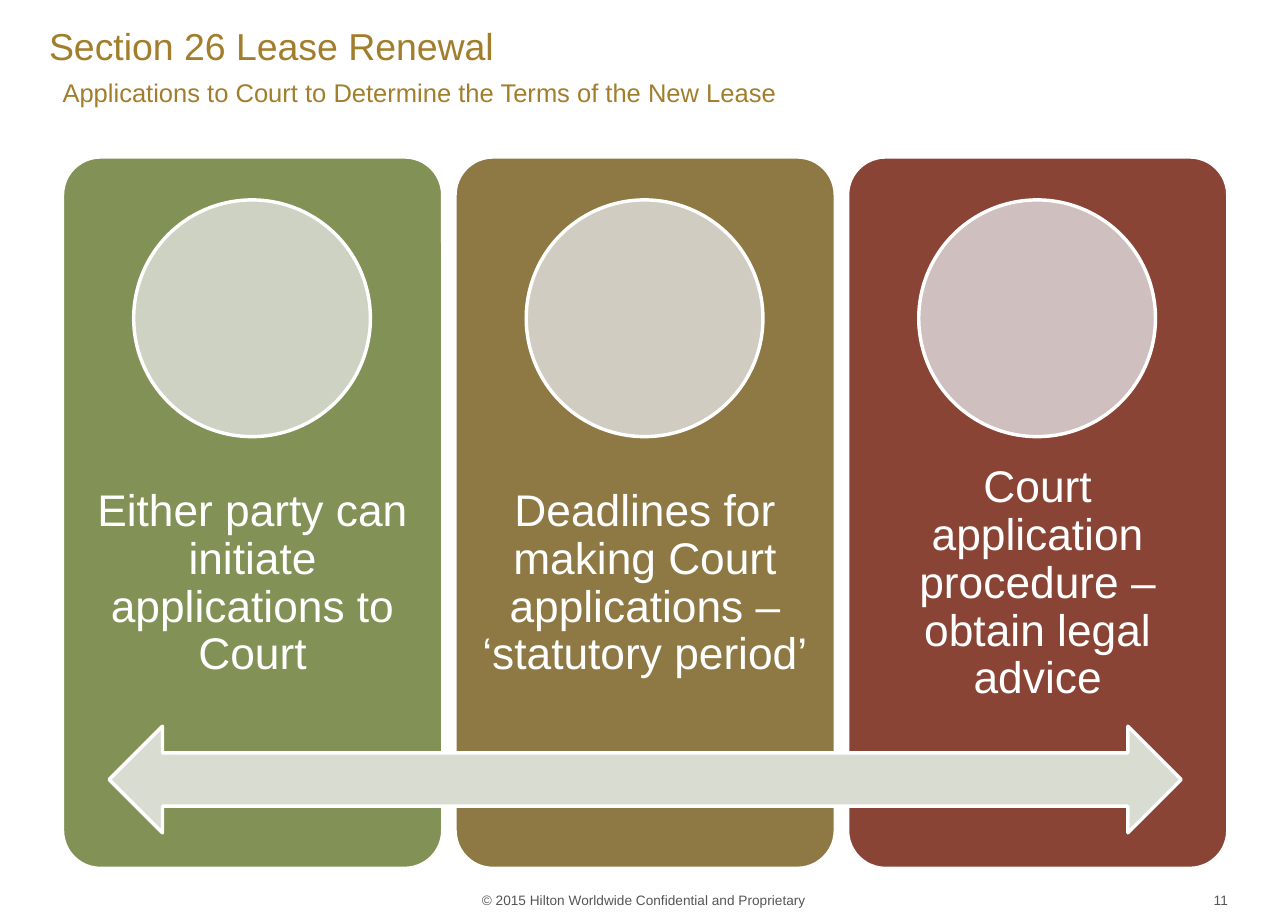
import pptx
import pptx.dml.color
import pptx.enum.shapes
import pptx.enum.text
import pptx.util

PX = 9144
SHAPE = pptx.enum.shapes.MSO_SHAPE
ALIGN = pptx.enum.text.PP_ALIGN
ANCHOR = pptx.enum.text.MSO_ANCHOR
GOLD = "A27E2C"
GREY = "555555"
WHITE = "FFFFFF"
CARD_LEFT, CARD_TOP, CARD_WIDTH, CARD_HEIGHT = 51, 128, 310, 580
CARD_STEP = 320
CIRCLE_SIZE = 193
CARDS = [
    ("Either party can initiate applications to Court", "829155", "CDD2C3"),
    ("Deadlines for making Court applications – ‘statutory period’", "8E7944", "D0CCC1"),
    ("Court application procedure – obtain legal advice", "8A4435", "CFC0BF"),
]


def px(*lengths):
    return [pptx.util.Emu(length * PX) for length in lengths]


def color(value):
    return pptx.dml.color.RGBColor.from_string(value)


def write(box, text, size, ink, align, anchor, insets):
    frame = box.text_frame
    frame.word_wrap = True
    frame.auto_size = pptx.enum.text.MSO_AUTO_SIZE.NONE
    frame.vertical_anchor = anchor
    (frame.margin_left, frame.margin_top,
     frame.margin_right, frame.margin_bottom) = px(*insets)
    para = frame.paragraphs[0]
    para.text = text
    para.alignment = align
    para.space_before = pptx.util.Pt(0)
    para.font.name = "Arial"
    para.font.size = pptx.util.Pt(size)
    para.font.color.rgb = color(ink)
    return para


def add_heading(holder, bounds, text, size, anchor):
    holder.left, holder.top, holder.width, holder.height = px(*bounds)
    return write(holder, text, size, GOLD, ALIGN.LEFT, anchor, (0, 5, 10, 5))


def add_label(page, bounds, *style):
    return write(page.shapes.add_textbox(*px(*bounds)), *style)


def add_figure(page, kind, bounds, fill):
    figure = page.shapes.add_shape(kind, *px(*bounds))
    figure.shadow.inherit = False
    figure.fill.solid()
    figure.fill.fore_color.rgb = color(fill)
    figure.line.color.rgb = color(WHITE)
    figure.line.width = pptx.util.Pt(2)
    return figure


def add_card(page, left, text, fill, tint):
    bounds = (left, CARD_TOP, CARD_WIDTH, CARD_HEIGHT)
    card = add_figure(page, SHAPE.ROUNDED_RECTANGLE, bounds, fill)
    card.adjustments[0] = 0.1
    para = add_label(page, (left, 360, CARD_WIDTH, 232), text, 26, WHITE,
                     ALIGN.CENTER, ANCHOR.MIDDLE, (20, 20, 20, 20))
    para.line_spacing = 0.9
    circle_left = left + (CARD_WIDTH - CIRCLE_SIZE) // 2
    add_figure(page, SHAPE.OVAL, (circle_left, 163, CIRCLE_SIZE, CIRCLE_SIZE), tint)


def main():
    deck = pptx.Presentation()
    deck.slide_width, deck.slide_height = px(1050, 750)
    page = deck.slides.add_slide(deck.slide_layouts[0])
    title = add_heading(page.shapes.title, (40, 0, 767, 74),
                        "Section 26 Lease Renewal", 22, ANCHOR.MIDDLE)
    title.line_spacing = pptx.util.Pt(26.7)
    add_heading(page.placeholders[1], (51, 58, 767, 35),
                "Applications to Court to Determine the Terms of the New Lease",
                15, ANCHOR.TOP)
    for index, card in enumerate(CARDS):
        add_card(page, CARD_LEFT + index * CARD_STEP, *card)
    add_figure(page, SHAPE.LEFT_RIGHT_ARROW, (89, 592, 874, 87), "D8DCD1")
    add_label(page, (375, 721, 300, 24),
              "© 2015 Hilton Worldwide Confidential and Proprietary",
              8, GREY, ALIGN.CENTER, ANCHOR.BOTTOM, (10, 5, 10, 5))
    add_label(page, (756, 714, 245, 40), "11", 8, GREY,
              ALIGN.RIGHT, ANCHOR.MIDDLE, (0, 5, 0, 5))
    deck.save("out.pptx")


if __name__ == "__main__":
    main()
